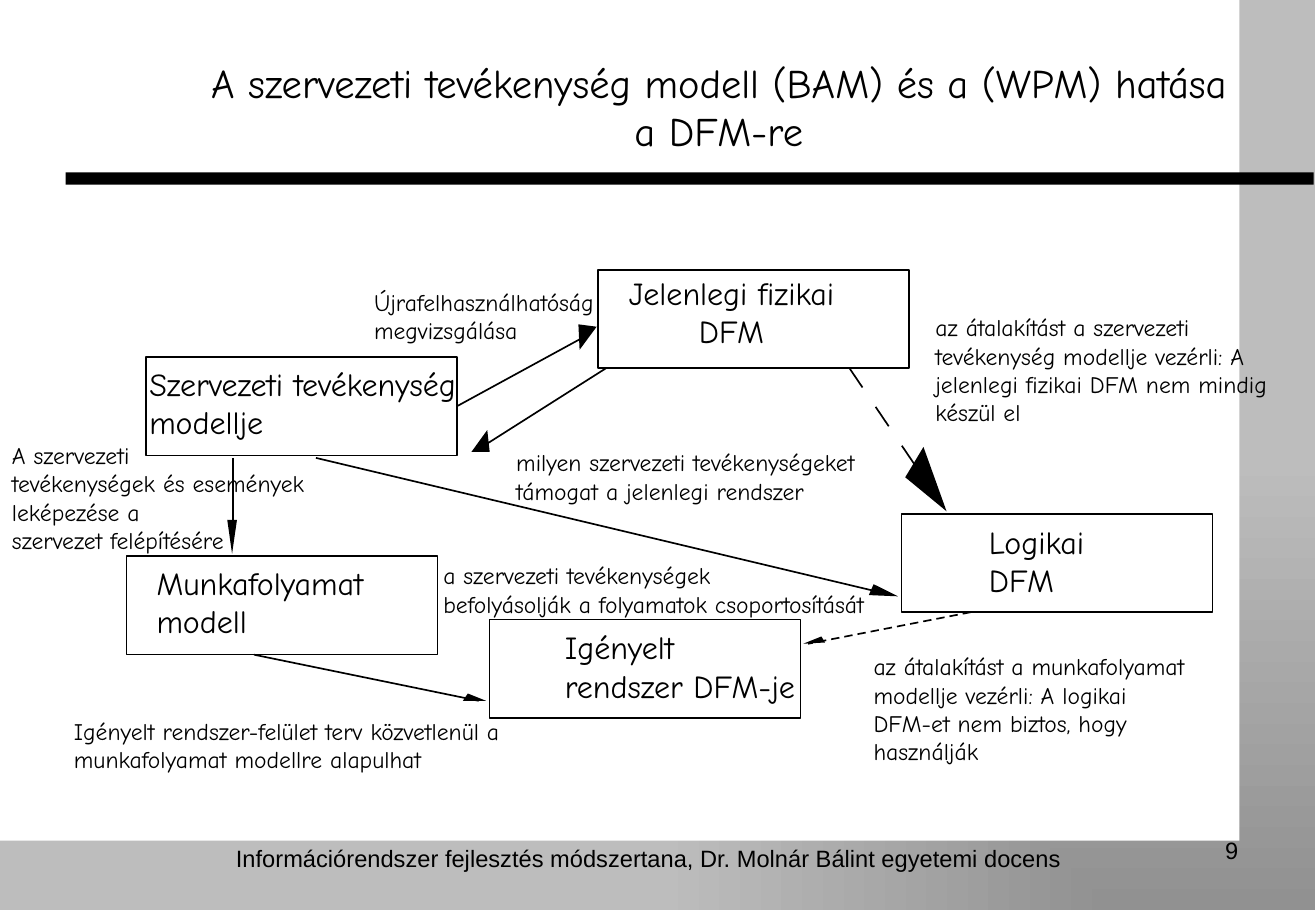
import lxml.etree
import pptx
import pptx.dml.color
import pptx.enum.shapes
import pptx.enum.text
import pptx.oxml.ns
import pptx.util

Inches = pptx.util.Inches
Align = pptx.enum.text.PP_ALIGN
Anchor = pptx.enum.text.MSO_ANCHOR
qn = pptx.oxml.ns.qn

BLACK = pptx.dml.color.RGBColor(0x00, 0x00, 0x00)
WHITE = pptx.dml.color.RGBColor(0xFF, 0xFF, 0xFF)
DARK_GREY = pptx.dml.color.RGBColor(0x91, 0x91, 0x91)
LIGHT_GREY = pptx.dml.color.RGBColor(0xBD, 0xBD, 0xBD)

TITLE = {"name": "Comic Neue", "size": pptx.util.Pt(24)}
BOX_LABEL = {"name": "Comic Neue", "size": pptx.util.Pt(19)}
NOTE = {"name": "Comic Neue", "size": pptx.util.Pt(14)}
FOOTER = {"name": "Arial", "size": pptx.util.Pt(14)}

BOX_SIZE = (2.56, 0.81)
BOXES = {
    "activity": (1.2, 2.94),
    "workflow": (1.04, 4.58),
    "physical": (4.92, 2.22),
    "logical": (7.42, 4.23),
    "required": (4.03, 5.1),
}

ARROWS = [
    ((3.8, 3.35), (4.85, 2.75), [(4.91, 2.69), (4.76, 2.67), (4.77, 2.88)], None, "activity"),
    ((4.99, 3.03), (3.95, 3.69), [(3.88, 3.72), (4.03, 3.72), (4.01, 3.54)], None, None),
    ((1.92, 3.77), (1.92, 4.44), [(1.91, 4.56), (1.95, 4.28), (1.87, 4.28)], None, None),
    ((2.6, 3.77), (7.3, 4.89), [(7.39, 4.91), (7.19, 4.81), (7.15, 4.9)], None, None),
    ((6.99, 3.03), (7.76, 4.17), [(7.79, 4.21), (7.6, 3.68), (7.45, 3.93)], (14, 14), None),
    ((7.99, 5.04), (6.65, 5.3), [(6.61, 5.3), (6.79, 5.29), (6.76, 5.24)], (5, 3), None),
    ((2.09, 5.39), (3.94, 5.77), [(4, 5.77), (3.85, 5.71), (3.81, 5.77)], None, None),
]

TEXTS = [
    ((1.56, 6.9, 7.56, 0.6), FOOTER, Align.CENTER,
     ["Információrendszer fejlesztés módszertana, Dr. Molnár Bálint egyetemi docens"]),
    ((7.76, 6.83, 2.53, 0.52), FOOTER, Align.RIGHT, ["9"]),
    ((1.19, 4.59, 2.07, 0.73), BOX_LABEL, Align.LEFT, ["Munkafolyamat", "modell"]),
    ((8.04, 4.25, 1.05, 0.73), BOX_LABEL, Align.LEFT, ["Logikai", "DFM"]),
    ((2.98, 2.32, 2.24, 0.57), NOTE, Align.LEFT, ["Újrafelhasználhatóság", "megvizsgálása"]),
    ((4.94, 2.2, 2.16, 0.73), BOX_LABEL, Align.CENTER, ["Jelenlegi fizikai", "DFM"]),
    ((1.13, 2.95, 3.15, 0.73), BOX_LABEL, Align.LEFT, ["Szervezeti tevékenység", "modellje"]),
    ((0, 3.58, 2.88, 1.03), NOTE, Align.LEFT,
     ["A szervezeti", "tevékenységek és események", "leképezése a", "szervezet felépítésére"]),
    ((4.55, 5.12, 2.33, 0.73), BOX_LABEL, Align.LEFT, ["Igényelt", "rendszer DFM-je"]),
    ((0.51, 5.85, 4.21, 0.57), NOTE, Align.LEFT,
     ["Igényelt rendszer-felület terv közvetlenül a", "munkafolyamat modellre alapulhat"]),
    ((3.55, 4.57, 4.1, 0.57), NOTE, Align.LEFT,
     ["a szervezeti tevékenységek", "befolyásolják a folyamatok csoportosítását"]),
    ((4.15, 3.64, 3.42, 0.57), NOTE, Align.LEFT,
     ["milyen szervezeti tevékenységeket", "támogat a jelenlegi rendszer"]),
    ((7.6, 2.53, 3.13, 1.03), NOTE, Align.LEFT,
     ["az átalakítást a szervezeti", "tevékenység modellje vezérli: A",
      "jelenlegi fizikai DFM nem mindig", "készül el"]),
    ((7.09, 5.32, 3.01, 1.03), NOTE, Align.LEFT,
     ["az átalakítást a munkafolyamat", "modellje vezérli: A logikai",
      "DFM-et nem biztos, hogy", "használják"]),
]


def inches(values):
    """Convert numbers to lengths."""
    return [Inches(value) for value in values]


def paint(shape, fill, outlined=False):
    """Give a shape a flat fill and an optional thin black outline."""
    shape.shadow.inherit = False
    shape.fill.solid()
    shape.fill.fore_color.rgb = fill
    if outlined:
        shape.line.color.rgb = BLACK
        shape.line.width = pptx.util.Pt(1)
    else:
        shape.line.fill.background()


def add_rectangle(page, place, fill, outlined=False):
    """Add a plain rectangle."""
    kind = pptx.enum.shapes.MSO_SHAPE.RECTANGLE
    box = page.shapes.add_shape(kind, *inches(place))
    paint(box, fill, outlined)
    return box


def add_backdrop(page):
    """Add the grey backdrop that darkens towards the lower right corner."""
    box = add_rectangle(page, (0, 0, 10.82, 7.49), LIGHT_GREY)
    box.fill.gradient()
    for stop, position, colour in zip(box.fill.gradient_stops, (0, 1), (DARK_GREY, LIGHT_GREY)):
        stop.position = position
        stop.color.rgb = colour
    gradient = box._element.spPr.find(qn("a:gradFill"))
    gradient.remove(gradient.find(qn("a:lin")))
    route = lxml.etree.SubElement(gradient, qn("a:path"), {"path": "rect"})
    lxml.etree.SubElement(route, qn("a:fillToRect"), {"l": "100000", "t": "100000"})


def add_text(page, place, style, align, lines, anchor=Anchor.TOP):
    """Add a text box with one paragraph for each line."""
    frame = page.shapes.add_textbox(*inches(place)).text_frame
    frame.word_wrap = True
    frame.vertical_anchor = anchor
    frame.text = "\n".join(lines)
    for para in frame.paragraphs:
        para.alignment = align
        for span in para.runs:
            span.font.color.rgb = BLACK
            for name, value in style.items():
                setattr(span.font, name, value)


def add_arrow(page, start, end, head, dash, source):
    """Add a line, solid or dashed, with a triangular head."""
    kind = pptx.enum.shapes.MSO_CONNECTOR.STRAIGHT
    line = page.shapes.add_connector(kind, *inches(start + end))
    line.line.color.rgb = BLACK
    line.line.width = pptx.util.Pt(1)
    if dash:
        pattern = lxml.etree.SubElement(line.line._get_or_add_ln(), qn("a:custDash"))
        sizes = {name: str(size * 100000) for name, size in zip(("d", "sp"), dash)}
        lxml.etree.SubElement(pattern, qn("a:ds"), sizes)
    lxml.etree.SubElement(line._element.spPr, qn("a:effectLst"))
    if source:
        line.begin_connect(source, 3)
    tip, *corners = [inches(point) for point in head]
    builder = page.shapes.build_freeform(*tip)
    builder.add_line_segments(corners, close=True)
    paint(builder.convert_to_shape(), BLACK)


def main():
    """Build the slide and save it."""
    deck = pptx.Presentation()
    deck.slide_width, deck.slide_height = inches((10.83, 7.5))
    page = deck.slides.add_slide(deck.slide_layouts[6])
    add_backdrop(page)
    add_rectangle(page, (0, 0, 10.2, 6.92), WHITE)
    add_rectangle(page, (0.54, 1.42, 10.27, 0.1), BLACK)
    add_text(page, (1.57, 0.25, 8.69, 1.25), TITLE, Align.CENTER,
             ["A szervezeti tevékenység modell (BAM) és a (WPM) hatása a DFM-re"], Anchor.MIDDLE)
    add_rectangle(page, (0.5, 2.03, 9.58, 4.12), WHITE)
    boxes = {name: add_rectangle(page, corner + BOX_SIZE, WHITE, True)
             for name, corner in BOXES.items()}
    for start, end, head, dash, source in ARROWS:
        add_arrow(page, start, end, head, dash, boxes.get(source))
    for place, style, align, lines in TEXTS:
        add_text(page, place, style, align, lines)
    deck.save("out.pptx")


if __name__ == "__main__":
    main()
